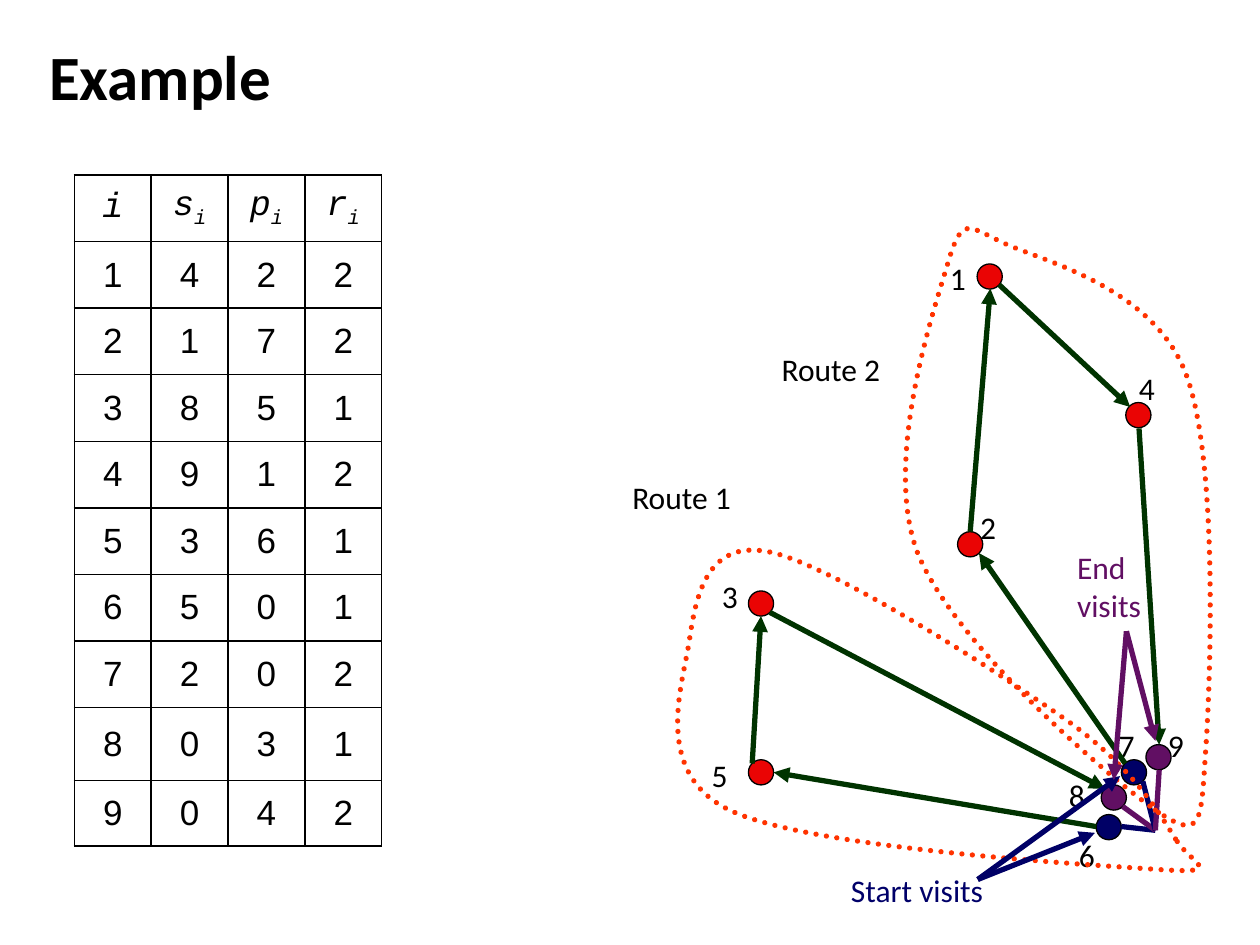
import pptx
import pptx.dml.color
import pptx.enum.dml
import pptx.enum.shapes
import pptx.enum.text
import pptx.oxml
import pptx.oxml.ns
import pptx.util

RED, NAVY, PURPLE = "EA0404", "000066", "610F63"
GREEN, ORANGE, BLACK = "003300", "FF3300", "000000"


def rgb(value):
    return pptx.dml.color.RGBColor.from_string(value)


def element(tag, parent, **attributes):
    child = pptx.oxml.parse_xml(f"<a:{tag} {pptx.oxml.ns.nsdecls('a')}/>")
    for name, value in attributes.items():
        child.set(name, value)
    parent.append(child)
    return child


class Diagram:
    """Style and slide; lengths are units of a grid of 100 columns by 75 rows."""

    unit = pptx.util.Inches(0.1)
    font, number_font, symbol_font = "Calibri", "Arial", "Courier New"
    label_size, cell_size = 18, 20
    node_size, stroke = 2, 3

    def __init__(self, prs):
        self.s = prs.slides.add_slide(prs.slide_layouts[6])

    def grid(self, *lengths):
        return [round(n * self.unit) for n in lengths]

    def style_run(self, r, size, color=BLACK, font=None, bold=False, italic=False):
        r.font.size = pptx.util.Pt(size)
        r.font.name = font or self.font
        r.font.bold, r.font.italic = bold, italic
        r.font.color.rgb = rgb(color)

    def text(self, words, x, y, w=3.9, h=4, color=BLACK):
        sp = self.s.shapes.add_textbox(*self.grid(x, y, w, h))
        tf = sp.text_frame
        tf.word_wrap = True
        tf.auto_size = pptx.enum.text.MSO_AUTO_SIZE.SHAPE_TO_FIT_TEXT
        tf.text = words
        for r in tf.paragraphs[0].runs:
            self.style_run(r, self.label_size, color)
        return sp

    def title(self, words, x, y, w, h):
        tf = self.text(words, x, y, w, h).text_frame
        tf.auto_size = pptx.enum.text.MSO_AUTO_SIZE.NONE
        tf.margin_left = tf.margin_right = tf.margin_top = tf.margin_bottom = 0
        self.style_run(tf.paragraphs[0].runs[0], 36, bold=True)

    def node(self, x, y, color):
        d = self.node_size
        sp = self.s.shapes.add_shape(
            pptx.enum.shapes.MSO_SHAPE.OVAL, *self.grid(x - d / 2, y - d / 2, d, d))
        sp.shadow.inherit = False
        sp.fill.solid()
        sp.fill.fore_color.rgb = rgb(color)
        sp.line.color.rgb = rgb(BLACK)
        sp.line.width = pptx.util.Pt(0.75)

    def line(self, start, end, color, arrow=True):
        sp = self.s.shapes.add_connector(
            pptx.enum.shapes.MSO_CONNECTOR.STRAIGHT, *self.grid(*start, *end))
        sp.line.color.rgb = rgb(color)
        sp.line.width = pptx.util.Pt(self.stroke)
        if arrow:
            element("tailEnd", sp.line._get_or_add_ln(), type="triangle")
        element("effectLst", sp._element.spPr)

    def loop(self, points):
        """Closed dotted outline of cubic curves: start, then triples."""
        builder = self.s.shapes.build_freeform(*self.grid(*points[0]))
        builder.add_line_segments([self.grid(*p) for p in points[1:]], close=True)
        sp = builder.convert_to_shape()
        # Every three straight segments become one curve
        segments = list(sp._element.iter(pptx.oxml.ns.qn("a:lnTo")))
        for i in range(0, len(segments), 3):
            outline = segments[i].getparent()
            curve = element("cubicBezTo", outline)
            segments[i].addprevious(curve)
            for segment in segments[i:i + 3]:
                curve.append(segment[0])
                outline.remove(segment)
        sp.shadow.inherit = False
        sp.fill.background()
        sp.line.color.rgb = rgb(ORANGE)
        sp.line.width = pptx.util.Pt(self.stroke)
        sp.line.dash_style = pptx.enum.dml.MSO_LINE.ROUND_DOT
        sp.line._get_or_add_ln().set("cap", "rnd")

    def cell(self, cell, words, header):
        cell.fill.background()
        cell.vertical_anchor = pptx.enum.text.MSO_ANCHOR.MIDDLE
        p = cell.text_frame.paragraphs[0]
        p.alignment = pptx.enum.text.PP_ALIGN.CENTER
        for position, letter in enumerate(words):
            r = p.add_run()
            r.text = letter
            self.style_run(r, self.cell_size, italic=header,
                           font=self.symbol_font if header else self.number_font)
            if position:
                r.font._element.set("baseline", "-25000")
        tcPr = cell._tc.get_or_add_tcPr()
        for index, side in enumerate(("lnL", "lnR", "lnT", "lnB")):
            ln = element(side, tcPr, w=str(pptx.util.Pt(1)))
            element("srgbClr", element("solidFill", ln), val=BLACK)
            tcPr.insert(index, ln)

    def table(self, rows, x, y, width, heights):
        frame = self.s.shapes.add_table(
            len(rows), len(rows[0]), *self.grid(x, y, width * len(rows[0]), sum(heights)))
        tbl = frame.table
        tbl.first_row = tbl.horz_banding = False
        for column in tbl.columns:
            column.width = self.grid(width)[0]
        for i, (row, height) in enumerate(zip(rows, heights)):
            tbl.rows[i].height = self.grid(height)[0]
            for j, words in enumerate(row):
                self.cell(tbl.cell(i, j), words, header=i == 0)


# Each visit: centre of the node, its colour, corner of its number
VISITS = {
    1: ((78.55, 21.95), RED, (74.4, 20.1)),
    2: ((77, 43.2), RED, (76.8, 39.85)),
    3: ((60.4, 47.9), RED, (56.3, 45.3)),
    4: ((90.35, 32.95), RED, (89.4, 28.8)),
    5: ((60.4, 61.3), RED, (55.5, 59.5)),
    6: ((88, 65.65), NAVY, (84.65, 65.85)),
    7: ((90, 61.3), NAVY, (87.8, 57.1)),
    8: ((88.4, 63.3), PURPLE, (83.85, 61.1)),
    9: ((91.95, 60.1), PURPLE, (91.7, 57.1)),
}
DEPOT = (91.7, 65.9)
DEPOT_LINKS = [((89, 65.6), NAVY), ((89.1, 64), PURPLE),
               ((90.7, 62), NAVY), ((92, 61.1), PURPLE)]
ROUTE_ARROWS = [
    ((87, 65.6), (61.4, 61.3)), ((59.7, 60.6), (60.4, 48.9)),
    ((61.1, 48.6), (87.7, 62.6)), ((89.3, 60.6), (77.7, 43.9)),
    ((77, 42.2), (78.6, 22.9)), ((79.3, 22.6), (89.7, 32.3)),
    ((90.4, 34), (92, 59.1)),
]
ROUTE_LOOPS = [
    [(93.3, 66.6), (92.1, 64.7), (90, 61), (84.7, 57.2),
     (79.3, 53.4), (66, 44.8), (61, 43.8), (56, 42.8), (55.2, 47.5), (54.7, 50.9),
     (54.2, 54.3), (51.7, 61.3), (57.9, 64.3), (64, 67.3), (85.8, 68.6), (91.7, 69),
     (97.6, 69.4), (94.5, 68.6), (93.3, 66.6)],
    [(91.7, 64.3), (95.5, 66.9), (95.3, 65.3), (95.7, 59.5),
     (96.1, 53.8), (96.7, 36.3), (94.1, 29.6), (91.5, 22.9), (83.1, 20.8), (79.9, 19.4),
     (76.8, 18), (76.4, 16.9), (75.2, 21), (74, 25), (70.1, 36.6), (72.8, 43.8),
     (75.6, 51), (87.9, 61.6), (91.7, 64.3)],
]
# Callouts: words, box, colour, arrow start, arrow ends
CALLOUTS = [
    ("Start visits", (66.55, 68.65, 18.1, 4), "000069", NAVY, (77.6, 69.8),
     [(88.9, 61.6), (86.9, 66.1)]),
    ("End \vvisits", (84.5, 43, 18.1, 7), PURPLE, PURPLE, (89.4, 50.1),
     [(91.7, 58.8), (88.4, 61.9)]),
]
ROWS = [("i", "si", "pi", "ri"), "1422", "2172", "3851", "4912",
        "5361", "6501", "7202", "8031", "9042"]


def main():
    prs = pptx.Presentation()
    prs.slide_width, prs.slide_height = pptx.util.Inches(10), pptx.util.Inches(7.5)
    d = Diagram(prs)
    d.title("Example", 3.9, 3, 76.8, 9.3)

    # Visits
    for number, (_, _, corner) in VISITS.items():
        d.text(str(number), *corner)
    for centre, color, _ in VISITS.values():
        d.node(*centre, color)

    # Links to the depot and arrows along the routes
    for start, color in DEPOT_LINKS:
        d.line(start, DEPOT, color, arrow=False)
    for start, end in ROUTE_ARROWS:
        d.line(start, end, GREEN)

    # Route outlines and names
    for points in ROUTE_LOOPS:
        d.loop(points)
    d.text("Route 1", 49.2, 37.45, 12.6)
    d.text("Route 2", 61.05, 27.3, 12.6)

    # Callouts for start and end visits
    for words, box, text_color, arrow_color, start, ends in CALLOUTS:
        d.text(words, *box, color=text_color)
        for end in ends:
            d.line(start, end, arrow_color)

    # Table of visit data
    d.table(ROWS, 5.9, 13.9, 6.1, [5.28] * 8 + [5.8, 5.2])
    prs.save("out.pptx")


if __name__ == "__main__":
    main()
